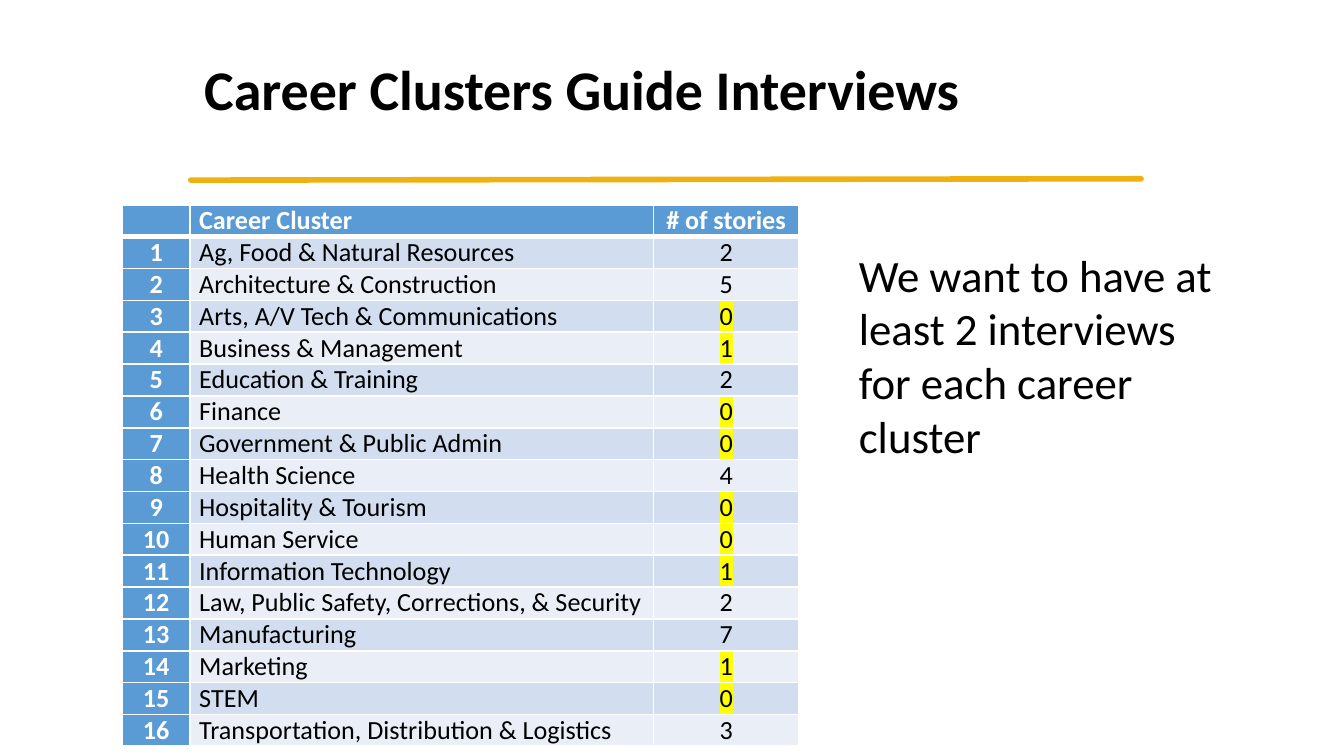
from lxml import etree
from pptx import Presentation
from pptx.dml.color import RGBColor
from pptx.enum.shapes import MSO_CONNECTOR
from pptx.enum.text import MSO_ANCHOR, MSO_AUTO_SIZE, PP_ALIGN
from pptx.oxml.ns import qn
from pptx.util import Pt

STRAIGHT = MSO_CONNECTOR.STRAIGHT
MIDDLE = MSO_ANCHOR.MIDDLE
LEFT, CENTER = PP_ALIGN.LEFT, PP_ALIGN.CENTER

# Content
TITLE = "Career Clusters Guide Interviews"
GOAL = ["We want to have at least 2 interviews", "for each career cluster"]
WANTED = 2
HEADINGS = ["", "Career Cluster", "# of stories"]
CLUSTERS = [
    ("Ag, Food & Natural Resources", 2),
    ("Architecture & Construction", 5),
    ("Arts, A/V Tech & Communications", 0),
    ("Business & Management", 1),
    ("Education & Training", 2),
    ("Finance", 0),
    ("Government & Public Admin", 0),
    ("Health Science", 4),
    ("Hospitality & Tourism", 0),
    ("Human Service", 0),
    ("Information Technology", 1),
    ("Law, Public Safety, Corrections, & Security", 2),
    ("Manufacturing", 7),
    ("Marketing", 1),
    ("STEM", 0),
    ("Transportation, Distribution & Logistics", 3),
]

FONT = "Calibri"
COLORS = {"text": "000000", "white": "FFFFFF", "rule": "EEB111", "head": "5B9BD5",
          "odd": "D2DEEF", "even": "EAEFF7", "mark": "FFFF00"}
COLUMN_WIDTHS = [36, 248.4, 77.8]
COLUMN_ALIGNS = [CENTER, LEFT, CENTER]
ROW_HEIGHT = 17
CELL_SIZE = 14


def rgb(name):
    return RGBColor.from_string(COLORS[name])


def add_span(para, text, size, color="text", bold=False):
    span = para.add_run()
    span.text = text
    span.font.name, span.font.size, span.font.bold = FONT, Pt(size), bold
    span.font.color.rgb = rgb(color)
    return span


def highlight(span):
    mark = etree.Element(qn("a:highlight"))
    etree.SubElement(mark, qn("a:srgbClr"), val=COLORS["mark"])
    span.font._element.find(qn("a:solidFill")).addnext(mark)


def set_borders(cell, top, bottom):
    properties = cell._tc.get_or_add_tcPr()
    widths = {"a:lnL": 1, "a:lnR": 1, "a:lnT": top, "a:lnB": bottom}
    for index, (tag, width) in enumerate(widths.items()):
        line = etree.Element(qn(tag), w=str(Pt(width)))
        fill = etree.SubElement(line, qn("a:solidFill"))
        etree.SubElement(fill, qn("a:srgbClr"), val=COLORS["white"])
        properties.insert(index, line)


deck = Presentation()
deck.slide_width, deck.slide_height = Pt(720), Pt(405)
page = deck.slides.add_slide(deck.slide_layouts[5])

# Title
title = page.shapes.title
title.left, title.top, title.width, title.height = Pt(102.2), Pt(10), Pt(579.6), Pt(78.5)
title.text_frame.vertical_anchor = MIDDLE
title.text_frame.word_wrap = True
para = title.text_frame.paragraphs[0]
para.alignment, para.line_spacing = LEFT, 0.9
add_span(para, TITLE, 30, bold=True)

# Rule under the title
rule = page.shapes.add_connector(STRAIGHT, Pt(102.2), Pt(96.5), Pt(611.3), Pt(95.8))
rule.line.color.rgb, rule.line.width = rgb("rule"), Pt(3)
rule.line._get_or_add_ln().set("cap", "rnd")
etree.SubElement(rule._element.spPr, qn("a:effectLst"))

# Table of clusters
rows = [HEADINGS] + [(n, *cluster) for n, cluster in enumerate(CLUSTERS, 1)]
table = page.shapes.add_table(len(rows), len(HEADINGS), Pt(65.7), Pt(109.7),
                              Pt(sum(COLUMN_WIDTHS)), Pt(ROW_HEIGHT * len(rows))).table
for column, width in zip(table.columns, COLUMN_WIDTHS):
    column.width = Pt(width)
for r, values in enumerate(rows):
    table.rows[r].height = Pt(ROW_HEIGHT)
    for c, value in enumerate(values):
        cell = table.cell(r, c)
        is_head = r == 0 or c == 0
        cell.margin_left = cell.margin_right = Pt(5)
        cell.margin_top = cell.margin_bottom = 0
        cell.fill.solid()
        cell.fill.fore_color.rgb = rgb("head" if is_head else "odd" if r % 2 else "even")
        set_borders(cell, 3 if r == 1 else 1, 3 if r == 0 else 1)
        para = cell.text_frame.paragraphs[0]
        para.alignment = COLUMN_ALIGNS[c]
        if value == "":
            # Keeps the empty cell as low as its row
            etree.SubElement(para._p, qn("a:endParaRPr"), sz=str(CELL_SIZE * 100))
            continue
        span = add_span(para, str(value), CELL_SIZE, "white" if is_head else "text", is_head)
        if r > 0 and c == 2 and value < WANTED:
            highlight(span)

# Goal beside the table
box = page.shapes.add_textbox(Pt(453), Pt(128.9), Pt(212.4), Pt(123.8))
box.text_frame.word_wrap = True
box.text_frame.auto_size = MSO_AUTO_SIZE.SHAPE_TO_FIT_TEXT
for index, text in enumerate(GOAL):
    para = box.text_frame.add_paragraph() if index else box.text_frame.paragraphs[0]
    add_span(para, text, 24)

deck.save("out.pptx")
